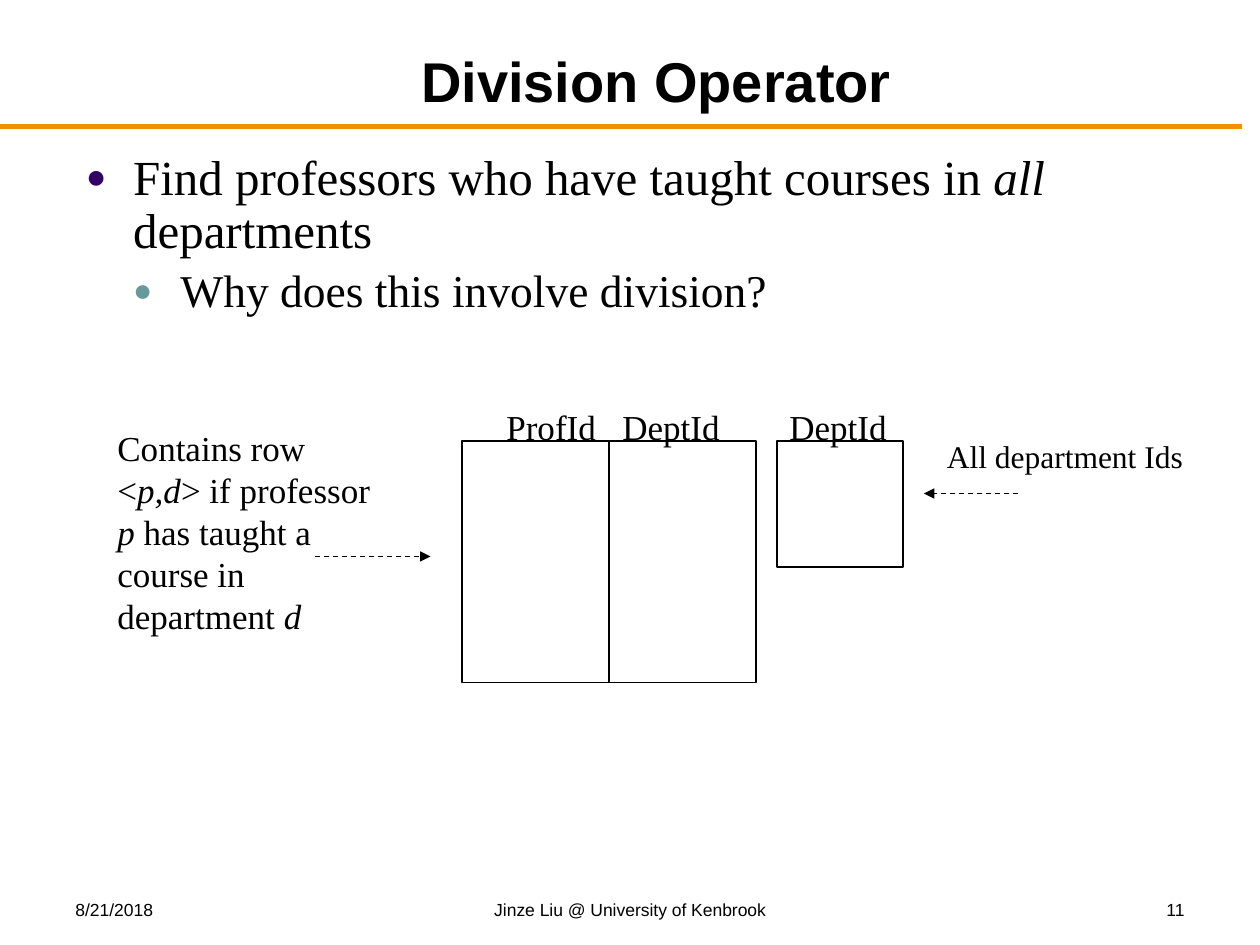
from lxml.etree import SubElement
from pptx import Presentation
from pptx.dml.color import RGBColor
from pptx.enum.dml import MSO_LINE
from pptx.enum.shapes import MSO_CONNECTOR as LINK, MSO_SHAPE as SHAPE
from pptx.enum.text import MSO_ANCHOR as ANCHOR, MSO_AUTO_SIZE as AUTO, PP_ALIGN as ALIGN
from pptx.oxml.ns import qn
from pptx.util import Pt

BLACK = RGBColor(0, 0, 0)
WHITE = RGBColor(255, 255, 255)
ORANGE = RGBColor(0xEF, 0x91, 0x00)
PURPLE = RGBColor(0x33, 0x00, 0x66)
TEAL = RGBColor(0x66, 0x99, 0x99)
SANS, SERIF = "Arial", "Times New Roman"

# A paragraph is a list of runs; a run in a tuple is italic.
TITLE = [["Division Operator"]]
BODY = [
    ["Find professors who have taught courses in ", ("all",), " departments"],
    ["Why does this involve division?"],
]
BULLETS = [(PURPLE, 28), (TEAL, 26)]
INDENT = 27
FOOT = [
    ("8/21/2018", (36, 510, 168, 18), ALIGN.LEFT),
    ("Jinze Liu @ University of Kenbrook", (246, 510, 228, 18), ALIGN.CENTER),
    ("11", (516, 510, 168, 18), ALIGN.RIGHT),
]
BOXES = [(264, 252, 168, 138), (444, 252, 72, 72)]
TAB = 66.3
LABELS = [
    ([["ProfId\tDeptId"]], (282.25, 228, 137.5, 31.5), 20),
    ([["DeptId"]], (444, 228, 70.5, 31.5), 20),
    ([["All department Ids"]], (534, 246, 151, 29), 18),
    ([["Contains row"],
      ["<", ("p,d",), "> if professor"],
      [("p",), " has taught a"],
      ["course in"],
      ["department ", ("d",)]], (60, 240, 160, 128), 20),
]
ARROWS = [(180, 318, 246, 318), (582, 282, 528, 282)]

deck = Presentation()
deck.slide_width, deck.slide_height = Pt(720), Pt(540)
slide = deck.slides.add_slide(deck.slide_layouts[6])
shapes = slide.shapes


def add_text(paras, place, font, size, align=ALIGN.LEFT, bold=False, wrap=True):
    box = shapes.add_textbox(*map(Pt, place))
    frame = box.text_frame
    frame.word_wrap = wrap
    frame.auto_size = AUTO.NONE if wrap else AUTO.SHAPE_TO_FIT_TEXT
    for i, runs in enumerate(paras):
        para = frame.paragraphs[0] if i == 0 else frame.add_paragraph()
        para.alignment = align
        for part in runs:
            run = para.add_run()
            slant = isinstance(part, tuple)
            run.text = part[0] if slant else part
            look = {"name": font, "size": Pt(size), "bold": bold, "italic": slant}
            for key, value in look.items():
                setattr(run.font, key, value)
            run.font.color.rgb = BLACK
    return frame


def add_line(ends, color=BLACK, width=0.75, arrow=False):
    line = shapes.add_connector(LINK.STRAIGHT, *map(Pt, ends))
    line.line.color.rgb = color
    line.line.width = Pt(width)
    if arrow:
        line.line.dash_style = MSO_LINE.DASH
        SubElement(line.line._get_or_add_ln(), qn("a:tailEnd"), type="triangle")
    SubElement(line._element.spPr, qn("a:effectLst"))


def add_bullet(para, level, color, size):
    para.level = level
    props = para._p.get_or_add_pPr()
    props.set("marL", str(Pt(INDENT * (level + 1))))
    props.set("indent", str(-Pt(INDENT)))
    tint = SubElement(props, qn("a:buClr"))
    SubElement(tint, qn("a:srgbClr"), val=str(color))
    SubElement(props, qn("a:buSzPct"), val="70000")
    SubElement(props, qn("a:buFont"), typeface=SANS)
    SubElement(props, qn("a:buChar"), char="●")
    para.line_spacing = 0.9
    para.space_before = Pt(size * 0.2)
    for run in para.runs:
        run.font.size = Pt(size)


add_line((0, 72.5, 710, 72.5), ORANGE, 3)
title = add_text(TITLE, (78, 18, 594, 50.5), SANS, 32, ALIGN.CENTER, bold=True)
title.vertical_anchor = ANCHOR.BOTTOM
for words, place, align in FOOT:
    add_text([[words]], place, SANS, 10, align)

body = add_text(BODY, (42, 84, 624, 204), SERIF, 28)
for level, (para, (color, size)) in enumerate(zip(body.paragraphs, BULLETS)):
    add_bullet(para, level, color, size)

for place in BOXES:
    box = shapes.add_shape(SHAPE.RECTANGLE, *map(Pt, place))
    box.shadow.inherit = False
    box.fill.solid()
    box.fill.fore_color.rgb = WHITE
    box.line.color.rgb = BLACK
    box.line.width = Pt(0.75)

heads, *_ = [add_text(paras, place, SERIF, size, wrap=False)
             for paras, place, size in LABELS]
tabs = SubElement(heads.paragraphs[0]._p.get_or_add_pPr(), qn("a:tabLst"))
SubElement(tabs, qn("a:tab"), pos=str(Pt(TAB)), algn="l")

left, top, width, height = BOXES[0]
middle = left + width / 2
add_line((middle, top, middle, top + height))
for ends in ARROWS:
    add_line(ends, arrow=True)

deck.save("out.pptx")
